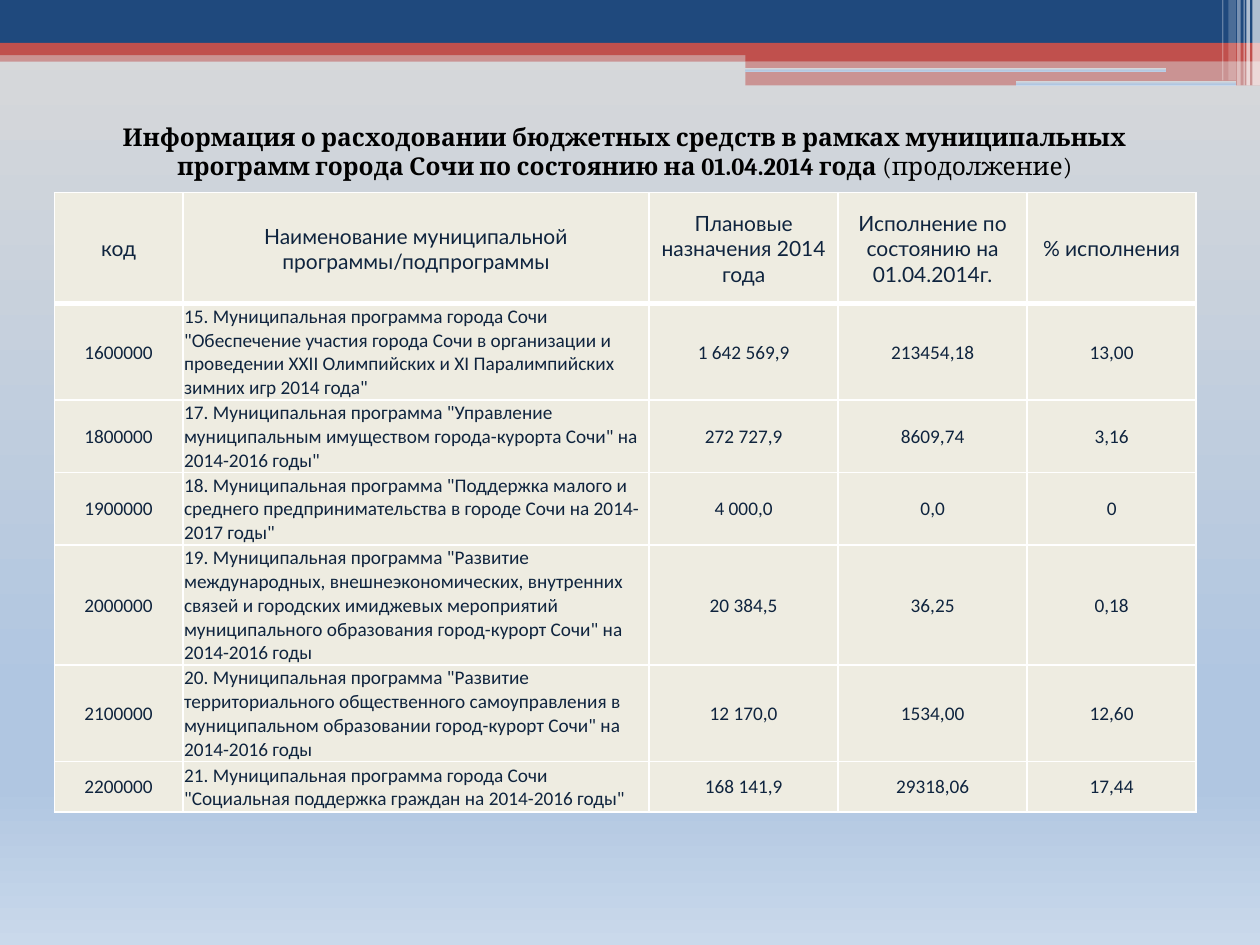
from dataclasses import dataclass

from lxml.etree import SubElement
from pptx import Presentation
from pptx.dml.color import RGBColor
from pptx.enum.shapes import MSO_SHAPE as Preset
from pptx.enum.text import MSO_ANCHOR as Anchor, PP_ALIGN as Align
from pptx.oxml import parse_xml
from pptx.oxml.ns import nsdecls, qn
from pptx.util import Pt


@dataclass(frozen=True)
class Theme:
    navy: str = "1F497D"
    red: str = "C0504D"
    white: str = "FFFFFF"
    cell: str = "EEECE1"
    ink: str = "0F243E"
    black: str = "000000"
    backdrop: tuple = ((0, "D9D9D9"), (74, "B0C6E1"), (83, "B0C6E1"), (100, "CAD9EB"))
    title_font: str = "Cambria"
    header_font: str = "Lato"
    body_font: str = "Calibri"
    title_size: int = 14
    header_size: int = 12
    body_size: int = 11


THEME = Theme()

# left, top, width, height, colour, opacity in percent
BANDS = [
    (0, 28.8, 720, 6.5, THEME.red, 50),
    (0, 0, 720, 24.5, THEME.navy, 100),
    (0, 24.5, 720, 7, THEME.red, 100),
    (426, 28, 294, 7, THEME.red, 100),
    (426, 34.8, 294, 14, THEME.red, 50),
]
SLOTS = [(425.5, 38.9, 241, 2.2), (580.5, 46.2, 126, 2.7)]
# left, width, height, opacity in percent
STRIPES = [
    (715.7, 4.3, 48.8, 65),
    (712.2, 2, 48.8, 65),
    (710.6, 0.7, 48.8, 60),
    (707, 2, 48.8, 40),
    (702, 4.3, 46, 20),
    (698.4, 0.7, 46, 30),
]

COLUMN_WIDTHS = [73.5, 266.5, 108, 108, 96.5]
ROW_HEIGHTS = [63.5, 55, 41, 41, 68.5, 55, 29]
NAME_COLUMN = 1
ROWS = [
    ["код", "Наименование муниципальной программы/подпрограммы",
     "Плановые назначения 2014 года", "Исполнение по состоянию на 01.04.2014г.",
     "% исполнения"],
    ["1600000", '15. Муниципальная программа города Сочи "Обеспечение участия города Сочи '
     'в организации и проведении XXII Олимпийских и XI Паралимпийских зимних игр 2014 года"',
     "1 642 569,9", "213454,18", "13,00"],
    ["1800000", '17. Муниципальная программа "Управление муниципальным имуществом '
     'города-курорта Сочи" на 2014-2016 годы"', "272 727,9", "8609,74", "3,16"],
    ["1900000", '18. Муниципальная программа "Поддержка малого и среднего '
     'предпринимательства в городе Сочи на 2014-2017 годы"', "4 000,0", "0,0", "0"],
    ["2000000", '19. Муниципальная программа "Развитие международных, внешнеэкономических, '
     'внутренних связей и городских имиджевых мероприятий муниципального образования '
     'город-курорт Сочи" на 2014-2016 годы', "20 384,5", "36,25", "0,18"],
    ["2100000", '20. Муниципальная программа "Развитие территориального общественного '
     'самоуправления в муниципальном образовании город-курорт Сочи" на 2014-2016 годы',
     "12 170,0", "1534,00", "12,60"],
    ["2200000", '21. Муниципальная программа города Сочи "Социальная поддержка граждан '
     'на 2014-2016 годы"', "168 141,9", "29318,06", "17,44"],
]


def style_run(run, font_name, size, color, bold=False):
    font = run.font
    font.name, font.size, font.bold = font_name, Pt(size), bold
    font.color.rgb = RGBColor.from_string(color)


def fill_backdrop(fill, owner):
    """Give the fill of the owner element the vertical backdrop gradient."""
    fill.gradient()
    fill.gradient_angle = 270
    stops = owner.find(".//" + qn("a:gsLst"))
    for stop in list(stops):
        stops.remove(stop)
    for position, color in THEME.backdrop:
        stop = SubElement(stops, qn("a:gs"), pos=str(position * 1000))
        SubElement(stop, qn("a:srgbClr"), val=color)


def add_bar(slide, box, color=None, opacity=100, preset=Preset.RECTANGLE):
    """Add a borderless bar; without a colour it shows the backdrop gradient."""
    bar = slide.shapes.add_shape(preset, *map(Pt, box))
    bar.shadow.inherit = False
    bar.line.fill.background()
    if color is None:
        fill_backdrop(bar.fill, bar.element.spPr)
        return
    bar.fill.solid()
    bar.fill.fore_color.rgb = RGBColor.from_string(color)
    if opacity < 100:
        color_element = bar.element.spPr.find(".//" + qn("a:srgbClr"))
        SubElement(color_element, qn("a:alpha"), val=str(opacity * 1000))


def add_banner(slide, left, top):
    for x, y, width, height, color, opacity in BANDS:
        add_bar(slide, (left + x, top + y, width, height), color, opacity)
    for x, y, width, height in SLOTS:
        add_bar(slide, (left + x, top + y, width, height), preset=Preset.ROUNDED_RECTANGLE)
    for x, width, height, opacity in STRIPES:
        add_bar(slide, (left + x, top, width, height), THEME.white, opacity)


def add_title(slide, left, top, width, height):
    frame = slide.shapes.add_textbox(Pt(left), Pt(top), Pt(width), Pt(height)).text_frame
    frame.word_wrap = True
    paragraph = frame.paragraphs[0]
    paragraph.alignment = Align.CENTER
    parts = [
        ("Информация о расходовании бюджетных средств в рамках муниципальных "
         "программ города Сочи по состоянию на 01.04.2014 года ", True),
        ("(продолжение)", False),
    ]
    for text, bold in parts:
        run = paragraph.add_run()
        run.text = text
        style_run(run, THEME.title_font, THEME.title_size, THEME.black, bold)


def set_borders(cell, top, bottom):
    """Draw white borders, 1 pt at the sides and the given widths above and below."""
    properties = cell._tc.get_or_add_tcPr()
    sides = [("lnL", 1), ("lnR", 1), ("lnT", top), ("lnB", bottom)]
    for index, (tag, width) in enumerate(sides):
        properties.insert(index, parse_xml(
            f'<a:{tag} {nsdecls("a")} w="{Pt(width)}"><a:solidFill>'
            f'<a:srgbClr val="{THEME.white}"/></a:solidFill></a:{tag}>'))


def fill_cell(cell, text, row, column):
    is_header = row == 0
    cell.fill.solid()
    cell.fill.fore_color.rgb = RGBColor.from_string(THEME.cell)
    cell.vertical_anchor = Anchor.MIDDLE
    cell.margin_left = cell.margin_right = cell.margin_top = Pt(0.7)
    cell.margin_bottom = 0
    set_borders(cell, 3 if row == 1 else 1, 3 if is_header else 1)
    cell.text = text
    paragraph = cell.text_frame.paragraphs[0]
    is_name = column == NAME_COLUMN and not is_header
    paragraph.alignment = Align.LEFT if is_name else Align.CENTER
    font_name, size = ((THEME.header_font, THEME.header_size) if is_header
                       else (THEME.body_font, THEME.body_size))
    style_run(paragraph.runs[0], font_name, size, THEME.ink)


def add_spending_table(slide, left, top):
    table = slide.shapes.add_table(
        len(ROWS), len(COLUMN_WIDTHS), Pt(left), Pt(top),
        Pt(sum(COLUMN_WIDTHS)), Pt(sum(ROW_HEIGHTS))).table
    table.horz_banding = False
    for column, width in zip(table.columns, COLUMN_WIDTHS):
        column.width = Pt(width)
    for row, height in zip(table.rows, ROW_HEIGHTS):
        row.height = Pt(height)
    for row, texts in enumerate(ROWS):
        for column, text in enumerate(texts):
            fill_cell(table.cell(row, column), text, row, column)


def main():
    presentation = Presentation()
    presentation.slide_width, presentation.slide_height = Pt(720), Pt(540)
    slide = presentation.slides.add_slide(presentation.slide_layouts[6])
    fill_backdrop(slide.background.fill, slide.element)
    add_banner(slide, 0, 0)
    add_spending_table(slide, 31, 110)
    add_title(slide, 36.5, 66.2, 641, 41)
    presentation.save("out.pptx")


if __name__ == "__main__":
    main()
